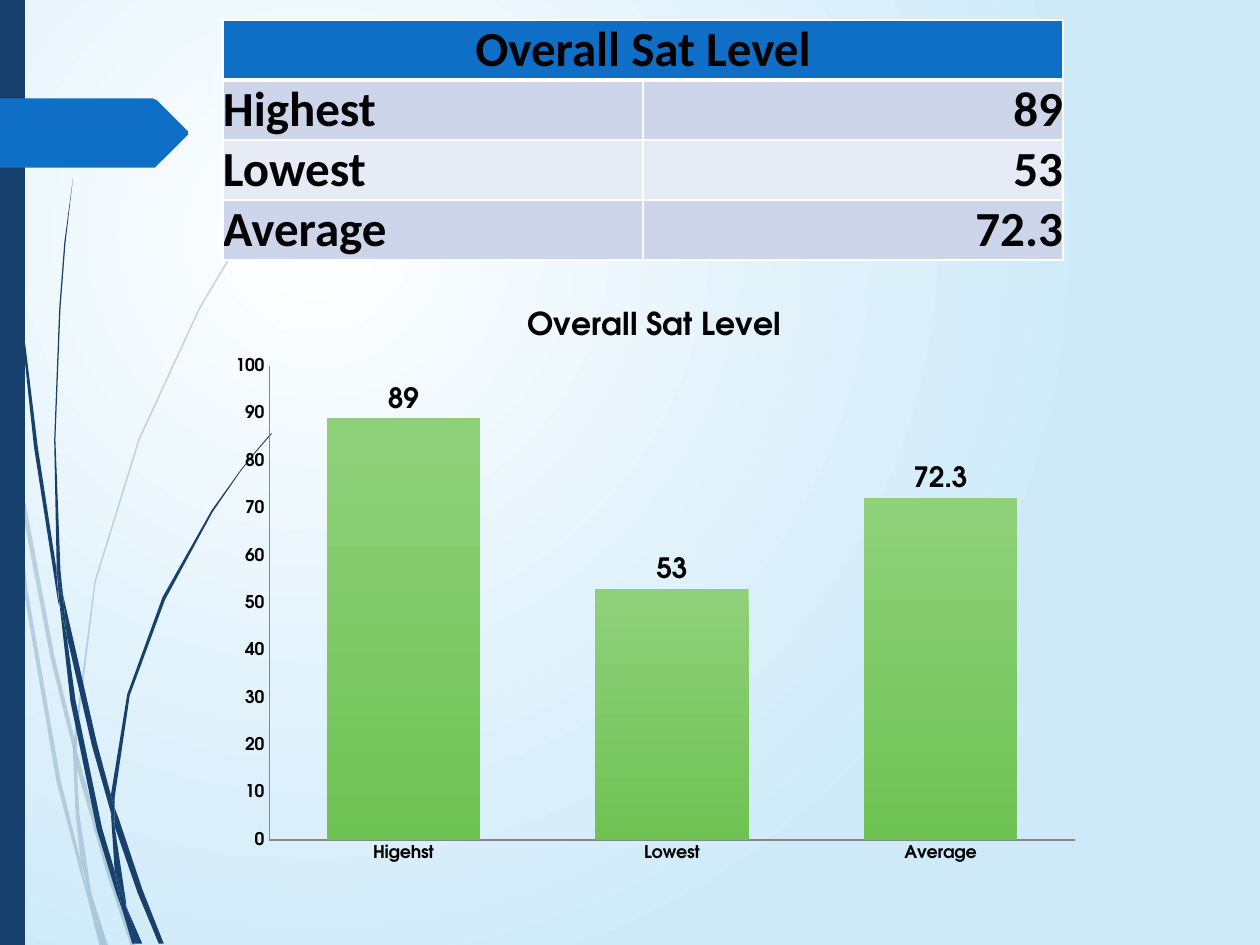
from dataclasses import dataclass

from lxml.etree import SubElement
from pptx import Presentation
from pptx.chart.data import CategoryChartData
from pptx.dml.color import RGBColor
from pptx.enum.chart import XL_CHART_TYPE, XL_LABEL_POSITION, XL_TICK_MARK
from pptx.enum.text import MSO_ANCHOR, PP_ALIGN
from pptx.oxml import parse_xml
from pptx.oxml.ns import nsdecls, qn
from pptx.util import Pt

Point = tuple[int, int]


@dataclass(frozen=True)
class Theme:
    navy: str = "17406D"
    blue: str = "0F6FC6"
    sky: str = "CEEAF9"
    white: str = "FFFFFF"
    black: str = "000000"
    axis: str = "868686"
    bar_top: str = "8FD17B"
    bar_bottom: str = "6FC254"
    bands: tuple[str, str] = ("CCD5EA", "E7EBF5")
    table_font: str = "Calibri"
    chart_font: str = "TeX Gyre Adventor"
    table_size: float = 28
    title_size: float = 18
    label_size: float = 16
    axis_size: float = 10


@dataclass(frozen=True)
class Wisp:
    """Outlines of one group of grass blades, in hundredths of an inch."""
    opacity: int
    blades: tuple[tuple[Point, ...], ...]


@dataclass(frozen=True)
class Level:
    row_name: str
    bar_name: str
    value: float


THEME = Theme()
HEADING = "Overall Sat Level"
LEVELS = (Level("Highest", "Higehst", 89), Level("Lowest", "Lowest", 53),
          Level("Average", "Average", 72.3))
GRID_UNIT = Pt(0.72)
BADGE = ((149, 107), (124, 132), (123, 133), (121, 133), (0, 133), (0, 78),
         (121, 78), (123, 79), (124, 79), (149, 104))
PALE_WISP = Wisp(20, (
    ((8, 350), (6, 322), (0, 282), (0, 299), (7, 344)),
    ((40, 522), (59, 599), (59, 586), (43, 520), (10, 345), (12, 376)),
    ((64, 607), (61, 596), (61, 610), (85, 694), (104, 751), (108, 751), (88, 692)),
    ((83, 751), (86, 751), (73, 711)),
    ((64, 683), (48, 619), (22, 469), (12, 376), (8, 350), (19, 470), (45, 621),
     (64, 693), (70, 714), (69, 707)),
    ((58, 599), (60, 646), (64, 683), (67, 692), (73, 711), (72, 706), (63, 646),
     (61, 610), (61, 608)),
    ((61, 584), (76, 462), (111, 349), (159, 245), (187, 198), (201, 175), (217, 154),
     (217, 153), (201, 175), (186, 197), (158, 244), (110, 348), (75, 461), (59, 584),
     (59, 586), (61, 596)),
    ((70, 714), (79, 751), (82, 751)),
    ((61, 608), (61, 610), (61, 596), (59, 586), (58, 599)),
    ((67, 692), (65, 683), (69, 707), (70, 714), (82, 751), (83, 751), (73, 711)),
))
DARK_WISP = Wisp(100, (
    ((5, 110), (14, 233), (27, 355), (46, 477), (47, 481), (45, 457), (45, 453),
     (30, 355), (15, 232), (6, 109), (4, 48), (3, 0), (2, 0), (3, 48)),
    ((73, 592), (88, 645), (88, 633), (88, 631), (77, 590), (50, 472), (53, 505)),
    ((94, 649), (91, 641), (91, 656), (109, 708), (126, 749), (130, 749), (113, 706)),
    ((91, 691), (81, 657), (60, 556), (53, 505), (47, 477), (56, 557), (77, 659),
     (92, 708), (97, 722), (96, 717)),
    ((50, 472), (48, 453), (44, 349), (48, 245), (52, 193), (58, 141), (51, 193),
     (47, 245), (43, 349), (45, 449), (49, 472)),
    ((110, 749), (113, 749), (100, 719)),
    ((47, 477), (53, 505), (50, 472), (49, 472), (45, 449), (45, 453)),
    ((91, 633), (103, 552), (131, 476), (169, 406), (191, 374), (203, 359), (216, 344),
     (215, 344), (203, 358), (191, 373), (168, 405), (129, 474), (101, 551), (88, 631),
     (91, 641)),
    ((97, 722), (105, 749), (108, 749)),
    ((88, 645), (91, 691), (96, 706), (100, 719), (100, 716), (91, 656), (90, 651)),
    ((88, 645), (90, 651), (91, 656), (91, 641), (88, 631), (88, 633)),
    ((96, 706), (91, 691), (96, 717), (97, 722), (108, 749), (110, 749), (100, 719)),
))


def color(code: str) -> RGBColor:
    return RGBColor.from_string(code)


def paint(shape, code: str) -> None:
    shape.fill.solid()
    shape.fill.fore_color.rgb = color(code)
    shape.line.fill.background()
    shape.shadow.inherit = False


def add_background(page) -> None:
    """Radial glow centred a quarter of the way in from the top left."""
    page.background.fill.solid()
    properties = page.element.find(f".//{qn('p:bgPr')}")
    stops = "".join(f'<a:gs pos="{position}"><a:srgbClr val="{code}"/></a:gs>'
                    for position, code in ((0, THEME.white), (100000, THEME.sky)))
    properties.replace(properties[0], parse_xml(
        f'<a:gradFill {nsdecls("a")} rotWithShape="1"><a:gsLst>{stops}</a:gsLst>'
        '<a:path path="circle"><a:fillToRect l="50000" t="50000" r="100000" b="100000"/>'
        '</a:path></a:gradFill>'))


def add_outline(shapes, points: tuple[Point, ...], code: str):
    builder = shapes.build_freeform(*points[0], scale=GRID_UNIT)
    builder.add_line_segments(points[1:], close=True)
    outline = builder.convert_to_shape()
    paint(outline, code)
    return outline


def add_wisp(page, wisp: Wisp) -> None:
    group = page.shapes.add_group_shape()
    for blade in wisp.blades:
        outline = add_outline(group.shapes, blade, THEME.navy)
        if wisp.opacity < 100:
            tint = outline.element.find(f".//{qn('a:srgbClr')}")
            SubElement(tint, qn("a:alpha")).set("val", str(wisp.opacity * 1000))


def set_borders(cell, bottom: float) -> None:
    properties = cell._tc.get_or_add_tcPr()
    for side, width in (("L", 1), ("R", 1), ("T", 1), ("B", bottom)):
        properties.append(parse_xml(
            f'<a:ln{side} {nsdecls("a")} w="{Pt(width)}"><a:solidFill>'
            f'<a:srgbClr val="{THEME.white}"/></a:solidFill></a:ln{side}>'))


def fill_cell(cell, text: str, align: PP_ALIGN, code: str, bottom: float = 1) -> None:
    set_borders(cell, bottom)
    cell.fill.solid()
    cell.fill.fore_color.rgb = color(code)
    cell.margin_left = cell.margin_right = cell.margin_top = cell.margin_bottom = 0
    cell.vertical_anchor = MSO_ANCHOR.BOTTOM
    para = cell.text_frame.paragraphs[0]
    para.text = text
    para.alignment = align
    set_font(para.font, THEME.table_font, THEME.table_size)


def set_font(font, name: str, size: float) -> None:
    font.name, font.size, font.bold = name, Pt(size), True
    font.color.rgb = color(THEME.black)


def add_level_table(page) -> None:
    table = page.shapes.add_table(len(LEVELS) + 1, 2, Pt(127.4), Pt(11.5),
                                  Pt(480), Pt(134.6)).table
    table.horz_banding = False
    table.cell(0, 0).merge(table.cell(0, 1))
    fill_cell(table.cell(0, 0), HEADING, PP_ALIGN.CENTER, THEME.blue, bottom=3)
    set_borders(table.cell(0, 1), bottom=3)
    for row, level in enumerate(LEVELS, start=1):
        band = THEME.bands[(row - 1) % 2]
        fill_cell(table.cell(row, 0), level.row_name, PP_ALIGN.LEFT, band)
        fill_cell(table.cell(row, 1), str(level.value), PP_ALIGN.RIGHT, band)


def add_level_chart(page) -> None:
    data = CategoryChartData()
    data.categories = [level.bar_name for level in LEVELS]
    data.add_series("Series 1", [level.value for level in LEVELS])
    chart = page.shapes.add_chart(XL_CHART_TYPE.COLUMN_CLUSTERED, Pt(123.8), Pt(162),
                                  Pt(500.4), Pt(338.4), data).chart
    set_font(chart.font, THEME.chart_font, THEME.axis_size)
    chart.has_legend = False
    chart.has_title = True
    title = chart.chart_title.text_frame.paragraphs[0]
    title.text = HEADING
    set_font(title.font, THEME.chart_font, THEME.title_size)
    chart.chart_title.include_in_layout = False

    for axis in (chart.category_axis, chart.value_axis):
        axis.major_tick_mark = axis.minor_tick_mark = XL_TICK_MARK.NONE
        axis.has_major_gridlines = False
        axis.format.line.color.rgb = color(THEME.axis)
        set_font(axis.tick_labels.font, THEME.chart_font, THEME.axis_size)
    chart.value_axis.minimum_scale, chart.value_axis.maximum_scale = 0, 100
    chart.value_axis.major_unit = 10

    plot = chart.plots[0]
    plot.gap_width = 75
    plot.vary_by_categories = False
    bar_fill = plot.series[0].format.fill
    bar_fill.gradient()
    bar_fill.gradient_angle = 270
    for stop, code in zip(bar_fill.gradient_stops, (THEME.bar_top, THEME.bar_bottom)):
        stop.color.rgb = color(code)
    labels = plot.series[0].data_labels
    labels.show_value = True
    labels.position = XL_LABEL_POSITION.OUTSIDE_END
    set_font(labels.font, THEME.chart_font, THEME.label_size)
    place_plot(chart, x=0.06, y=0.14, w=0.92, h=0.8)


def place_plot(chart, **fractions: float) -> None:
    area = chart.element.find(f".//{qn('c:plotArea')}")
    for layout in area.findall(qn("c:layout")):
        area.remove(layout)
    sizes = "".join(f'<c:{key} val="{value}"/>' for key, value in fractions.items())
    area.insert(0, parse_xml(
        f'<c:layout {nsdecls("c")}><c:manualLayout><c:layoutTarget val="inner"/>'
        f'<c:xMode val="edge"/><c:yMode val="edge"/>{sizes}</c:manualLayout></c:layout>'))


def main() -> None:
    deck = Presentation()
    deck.slide_width, deck.slide_height = Pt(720), Pt(540)
    page = deck.slides.add_slide(deck.slide_layouts[6])
    add_background(page)
    add_wisp(page, PALE_WISP)
    add_wisp(page, DARK_WISP)
    add_outline(page.shapes, ((0, 0), (20, 0), (20, 750), (0, 750)), THEME.navy)
    add_outline(page.shapes, BADGE, THEME.blue)
    add_level_table(page)
    add_level_chart(page)
    deck.save("out.pptx")


if __name__ == "__main__":
    main()
